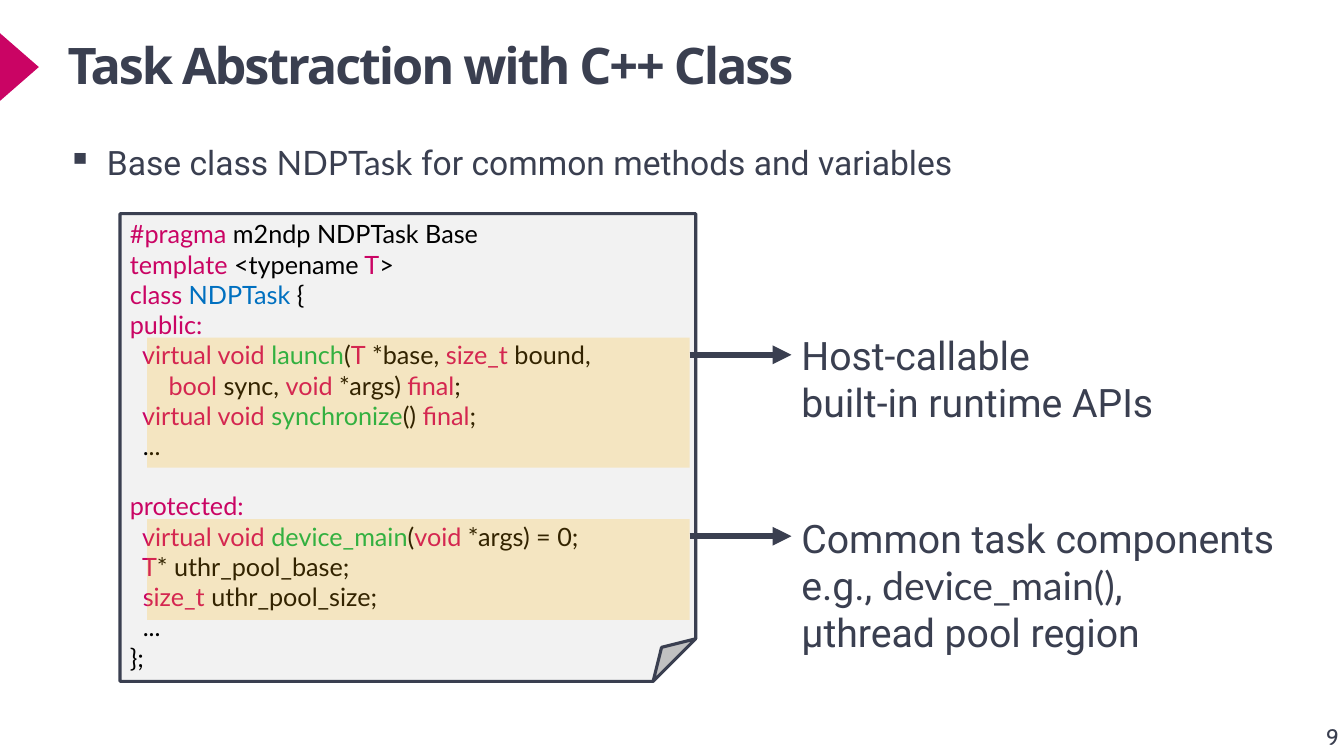
from lxml.etree import SubElement
from pptx import Presentation
from pptx.dml.color import RGBColor
from pptx.enum.shapes import MSO_CONNECTOR as Connector, MSO_SHAPE as Shape
from pptx.enum.text import MSO_ANCHOR as Anchor, MSO_AUTO_SIZE as AutoSize, PP_ALIGN as Align
from pptx.oxml.ns import qn
from pptx.util import Inches, Pt

COLORS = {
    "ink": "3A3F50", "accent": "CA0464", "black": "000000", "type": "0070C0",
    "method": "00B050", "paper": "F2F2F2", "highlight": "FFB300",
}
CODE = [
    [("#pragma ", "accent"), ("m2ndp NDPTask Base", "black")],
    [("template ", "accent"), ("<typename", "black"), (" T", "accent"), (">", "black")],
    [("class ", "accent"), ("NDPTask", "type"), (" {", "black")],
    [("public:", "accent")],
    [("  virtual void ", "accent"), ("launch", "method"), ("(", "black"), ("T", "accent"),
     (" *base, ", "black"), ("size_t", "accent"), (" bound,", "black")],
    [("      bool", "accent"), (" sync, ", "black"), ("void", "accent"),
     (" *args) ", "black"), ("final", "accent"), (";", "black")],
    [("  virtual void ", "accent"), ("synchronize", "method"), ("() ", "black"),
     ("final", "accent"), (";", "black")],
    [("  ...", "black")],
    [("protected:", "accent")],
    [("  virtual void ", "accent"), ("device_main", "method"), ("(", "black"),
     ("void", "accent"), (" *args) = 0;", "black")],
    [("  T", "accent"), ("* uthr_pool_base;", "black")],
    [("  size_t ", "accent"), ("uthr_pool_size;", "black")],
    [("  ...", "black")],
    [("};", "black")],
]
SECTION_START = 8
CALLOUTS = [
    ((1.46, 3.35, 5.38, 1.29), (7.85, 3.24, 3.86, 1.04),
     [[("Host-callable",)], [("built-in runtime APIs",)]]),
    ((1.46, 5.15, 5.38, 1), (7.85, 5.05, 4.95, 1.51),
     [[("Common task components",)],
      [("e.g., ",), ("device_main()", "ink", "Lato"), (",",)],
      [("μthread pool region",)]]),
]


def rgb(name):
    return RGBColor.from_string(COLORS[name])


def add_text(slide, box, lines, size, font="Roboto", color="ink", bold=False, spacing=None,
             align=Align.LEFT, anchor=Anchor.TOP, inset=True, wrap=True, grow=False,
             bullet=None, line_spacing=None):
    frame = slide.shapes.add_textbox(*map(Inches, box)).text_frame
    frame.word_wrap = wrap
    frame.auto_size = AutoSize.SHAPE_TO_FIT_TEXT if grow else AutoSize.NONE
    frame.vertical_anchor = anchor
    if not inset:
        frame.margin_left = frame.margin_top = frame.margin_right = frame.margin_bottom = 0
    for index, line in enumerate(lines):
        paragraph = frame.paragraphs[0] if index == 0 else frame.add_paragraph()
        paragraph.alignment = align
        if line_spacing:
            paragraph.line_spacing = line_spacing
        if bullet:
            add_bullet(paragraph, bullet, color)
        for text, *style in line:
            run = paragraph.add_run()
            run.text = text
            run.font.size = Pt(size)
            run.font.bold = bold
            run.font.color.rgb = rgb(style[0] if style else color)
            run.font.name = style[1] if len(style) > 1 else font
            if spacing:
                run._r.get_or_add_rPr().set("spc", str(round(spacing * 100)))
    return frame


def add_bullet(paragraph, mark, color):
    properties = paragraph._p.get_or_add_pPr()
    properties.set("marL", str(Inches(0.39)))
    properties.set("indent", str(-Inches(0.39)))
    tint = SubElement(properties, qn("a:buClr"))
    SubElement(tint, qn("a:srgbClr")).set("val", COLORS[color])
    SubElement(properties, qn("a:buChar")).set("char", mark)


def add_block(slide, preset, box, fill, line=None, alpha=None):
    block = slide.shapes.add_shape(preset, *map(Inches, box))
    block.shadow.inherit = False
    block.fill.solid()
    block.fill.fore_color.rgb = rgb(fill)
    if alpha:
        tint = block._element.spPr.find(qn("a:solidFill")).find(qn("a:srgbClr"))
        SubElement(tint, qn("a:alpha")).set("val", str(alpha * 1000))
    if line:
        block.line.color.rgb = rgb(line)
        block.line.width = Pt(2.25)
    else:
        block.line.fill.background()
    return block


def add_arrow(slide, left, right, y):
    arrow = slide.shapes.add_connector(
        Connector.STRAIGHT, Inches(left), Inches(y), Inches(right), Inches(y))
    arrow.line.color.rgb = rgb("ink")
    arrow.line.width = Pt(4.5)
    SubElement(arrow.line._get_or_add_ln(), qn("a:tailEnd")).set("type", "triangle")
    SubElement(arrow._element.spPr, qn("a:effectLst"))


def draw_header(slide, box):
    left, top, width, height = box
    marker = add_block(slide, Shape.ISOSCELES_TRIANGLE,
                       (left - 0.82, top + 0.09, 0.68, 0.39), "accent")
    marker.rotation = 90
    add_text(slide, box, [[("Task Abstraction with C++ Class",)]], 36, font="Open Sans",
             bold=True, spacing=-1.5, inset=False, line_spacing=0.95)


def draw_summary(slide, box):
    add_text(slide, box, [[("Base class ",), ("NDPTask ", "ink", "Lato"),
                           ("for common methods and variables",)]],
             24, inset=False, bullet="▪")


def draw_code_page(slide, box):
    left, top, width, height = box
    page = add_block(slide, Shape.FOLDED_CORNER, box, "paper", line="ink")
    fold = SubElement(page._element.spPr.prstGeom.get_or_add_avLst(), qn("a:gd"))
    fold.set("name", "adj")
    fold.set("fmla", "val 9100")
    code = add_text(slide, (left, top, width - 0.07, height), CODE, 18, font="Lato", grow=True)
    code.paragraphs[SECTION_START].space_before = Pt(21.6)


def draw_callout(slide, highlight, label, lines):
    add_block(slide, Shape.RECTANGLE, highlight, "highlight", alpha=20)
    left, top, width, height = highlight
    add_arrow(slide, left + width, label[0], top + 0.17)
    add_text(slide, label, lines, 28, wrap=False, grow=True)


def draw_page_number(slide, box):
    add_text(slide, box, [[("9",)]], 16, font="Cabin", align=Align.RIGHT,
             anchor=Anchor.BOTTOM, inset=False)


def main():
    deck = Presentation()
    deck.slide_width, deck.slide_height = Inches(13.33), Inches(7.5)
    slide = deck.slides.add_slide(deck.slide_layouts[6])
    draw_header(slide, (0.67, 0.38, 12.24, 0.86))
    draw_summary(slide, (0.67, 1.41, 12.09, 5.92))
    draw_page_number(slide, (12.61, 6.76, 0.67, 0.68))
    draw_code_page(slide, (1.19, 2.12, 5.71, 4.64))
    for highlight, label, lines in CALLOUTS:
        draw_callout(slide, highlight, label, lines)
    deck.save("out.pptx")


if __name__ == "__main__":
    main()
